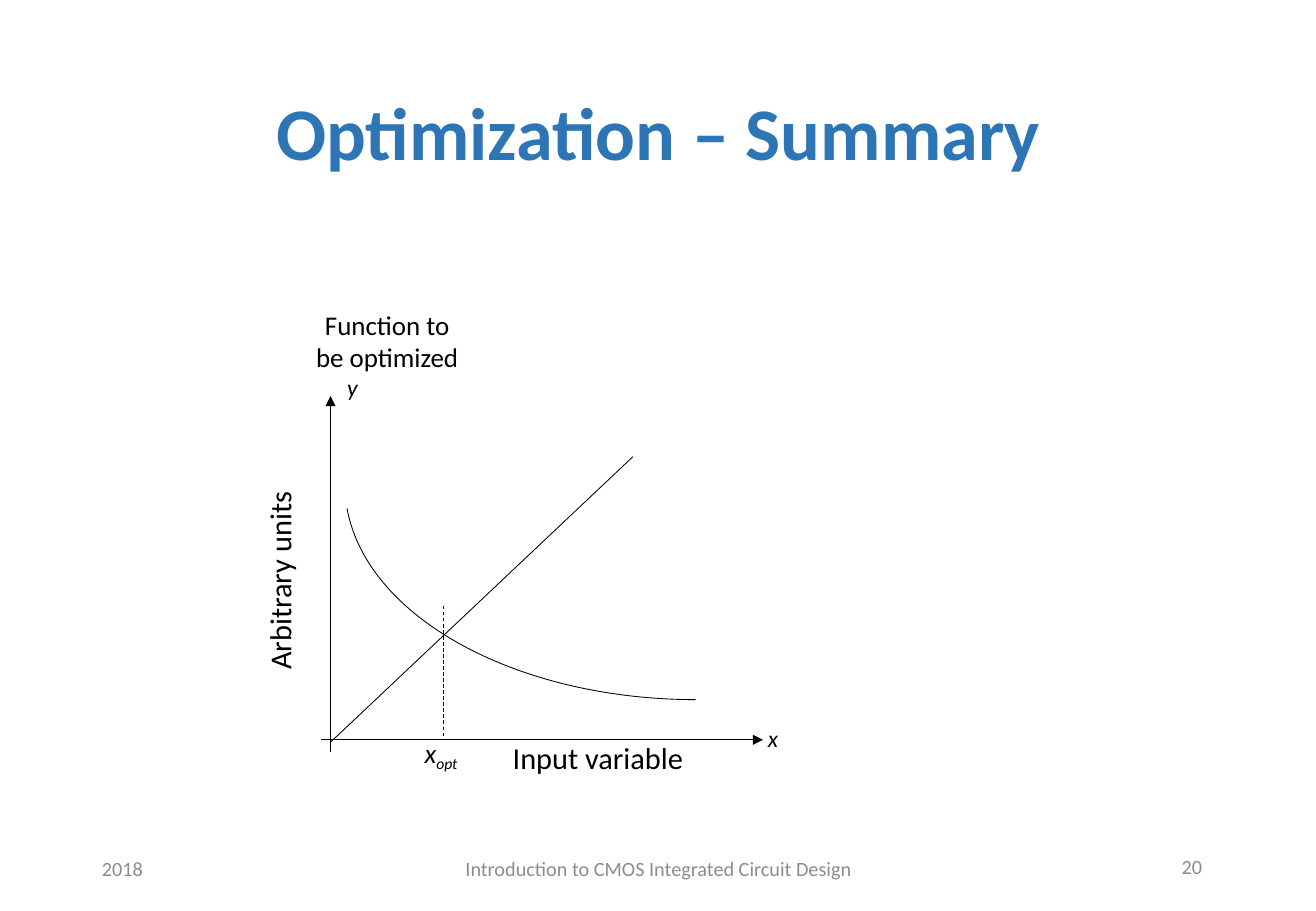
from lxml import etree
from pptx import Presentation
from pptx.dml.color import RGBColor
from pptx.enum.dml import MSO_LINE
from pptx.enum.shapes import MSO_CONNECTOR, MSO_SHAPE
from pptx.enum.text import MSO_ANCHOR, PP_ALIGN
from pptx.oxml.ns import qn
from pptx.util import Cm, Pt

COLOURS = {"title": "2E75B6", "footer": "8C8C8C", "ink": "000000"}
FONT = "Calibri"
LEFT, CENTER, RIGHT = PP_ALIGN.LEFT, PP_ALIGN.CENTER, PP_ALIGN.RIGHT
TOP, MIDDLE = MSO_ANCHOR.TOP, MSO_ANCHOR.MIDDLE
STRAIGHT, ARC, DASH = MSO_CONNECTOR.STRAIGHT, MSO_SHAPE.ARC, MSO_LINE.DASH
LINE_WIDTH = Pt(0.5)


def add_text(page, place, text, size, colour, align=CENTER, anchor=MIDDLE, spacing=None):
    """Add a text box with uniformly formatted paragraphs."""
    box = page.shapes.add_textbox(*map(Cm, place))
    frame = box.text_frame
    frame.word_wrap = True
    frame.vertical_anchor = anchor
    frame.text = text
    for para in frame.paragraphs:
        para.alignment = align
        para.line_spacing = spacing
        for span in para.runs:
            format_span(span, size, colour)
    return box


def format_span(span, size, colour):
    """Set the font, size and colour of a run."""
    span.font.name = FONT
    span.font.size = Pt(size)
    span.font.color.rgb = RGBColor.from_string(COLOURS[colour])


def add_label(page, place, text, size, spacing=Pt(16), italic=False):
    """Add a diagram label without inner margins."""
    box = add_text(page, place, text, size, "ink", anchor=TOP, spacing=spacing)
    frame = box.text_frame
    frame.margin_left = frame.margin_right = frame.margin_top = frame.margin_bottom = 0
    for para in frame.paragraphs:
        for span in para.runs:
            span.font.italic = italic
    return box


def style_line(line):
    """Give a line the thin black stroke of the diagram."""
    line.width = LINE_WIDTH
    line.color.rgb = RGBColor.from_string(COLOURS["ink"])


def add_line(page, ends, arrow=False, dash=None):
    """Add a straight line, optionally dashed or with an arrowhead."""
    connector = page.shapes.add_connector(STRAIGHT, *map(Cm, ends))
    style_line(connector.line)
    if dash:
        connector.line.dash_style = dash
    properties = connector._element.spPr
    if arrow:
        etree.SubElement(properties.find(qn("a:ln")), qn("a:tailEnd"), type="triangle")
    etree.SubElement(properties, qn("a:effectLst"))


def add_falling_curve(page, place):
    """Add the quarter arc that falls from left to right."""
    curve = page.shapes.add_shape(ARC, *map(Cm, place))
    curve.adjustments[0] = 162
    curve.adjustments[1] = 213.7
    curve.rotation = 180
    curve.shadow.inherit = False
    curve.fill.background()
    style_line(curve.line)


def add_optimum_label(page, place):
    """Add the label x with the subscript opt."""
    box = add_label(page, place, "x", 16, italic=True)
    span = box.text_frame.paragraphs[0].add_run()
    span.text = "opt"
    format_span(span, 16, "ink")
    span.font.italic = True
    span.font._element.set("baseline", "-25000")


def add_diagram(page):
    """Draw the axes, both functions and their labels."""
    add_label(page, (5.72, 6.45, 4.75, 1.52), "Function to\nbe optimized", 16, spacing=None)
    add_label(page, (15.65, 15.16, 1.02, 1.07), "x", 14, italic=True)
    add_label(page, (6.86, 7.82, 1.02, 1.07), "y", 14, italic=True)
    add_label(page, (9.91, 15.65, 5.18, 1.09), "Input variable", 18)
    add_label(page, (3.61, 11.61, 5.16, 1.07), "Arbitrary units", 18).rotation = 270
    add_optimum_label(page, (8.71, 15.6, 1.02, 1.07))
    add_line(page, (6.91, 15.72, 6.91, 8.28), arrow=True)
    add_line(page, (6.71, 15.47, 15.95, 15.47), arrow=True)
    add_line(page, (6.91, 15.52, 13.23, 9.55))
    add_line(page, (9.27, 15.39, 9.27, 12.67), dash=DASH)
    add_falling_curve(page, (7.21, 5.66, 14.66, 8.97))


def main():
    """Build the slide and save it."""
    deck = Presentation()
    deck.slide_width, deck.slide_height = Cm(27.51), Cm(19.05)
    page = deck.slides.add_slide(deck.slide_layouts[6])
    title = add_text(page, (1.78, 1.02, 23.98, 3.68), "Optimization – Summary", 44, "title", spacing=0.9)
    title.text_frame.paragraphs[0].runs[0].font.bold = True
    for place, text, align in (
        ((1.88, 17.65, 6.2, 1.02), "2018", LEFT),
        ((9.12, 17.65, 9.3, 1.02), "Introduction to CMOS Integrated Circuit Design", CENTER),
        ((19.18, 17.6, 6.2, 1.02), "20", RIGHT),
    ):
        add_text(page, place, text, 12, "footer", align)
    add_diagram(page)
    deck.save("out.pptx")


if __name__ == "__main__":
    main()
